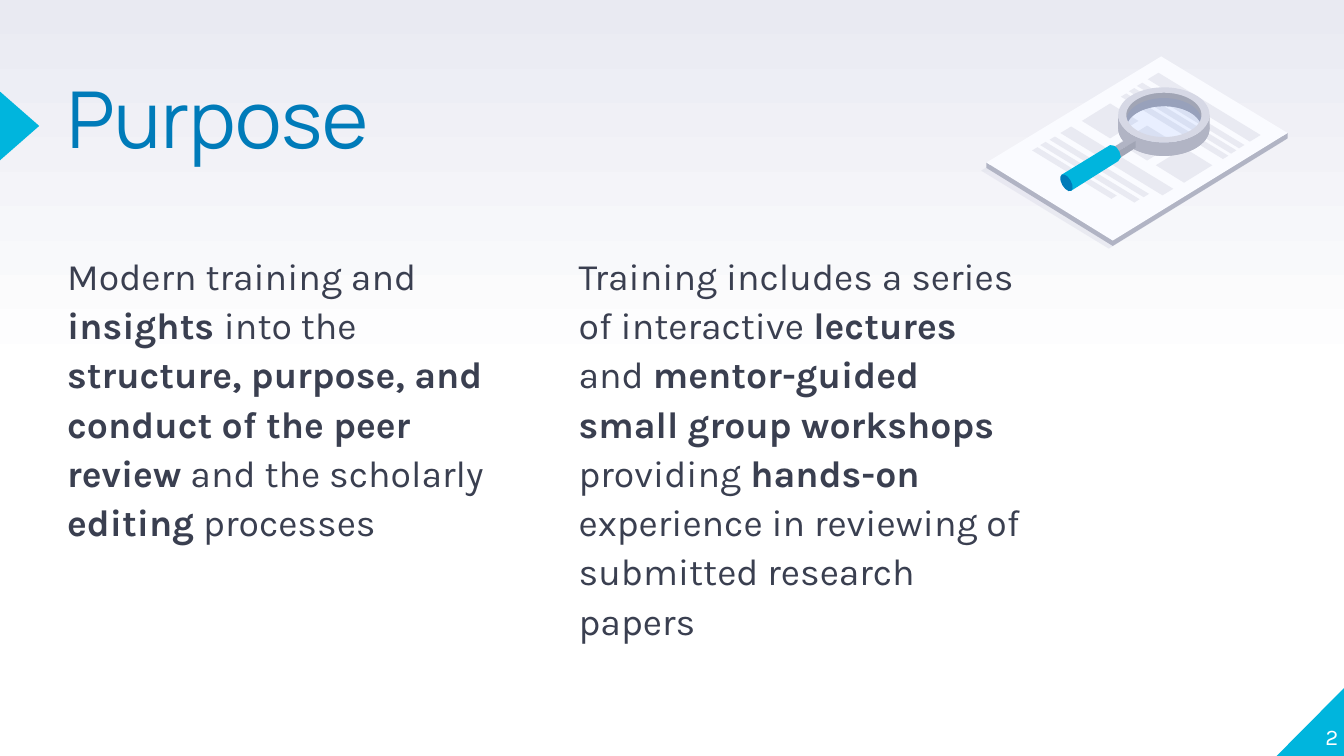
from copy import deepcopy
from math import cos, radians, sin

from lxml import etree
from pptx import Presentation
from pptx.dml.color import RGBColor
from pptx.enum import shapes as kinds, text
from pptx.oxml import ns
from pptx.util import Pt

WHITE = RGBColor(0xFF, 0xFF, 0xFF)
BLACK_INK = RGBColor(0x3A, 0x3F, 0x50)
BLUE = RGBColor(0x00, 0x7B, 0xB9)
CYAN = RGBColor(0x00, 0xB5, 0xDD)
LENS = RGBColor(0x3E, 0x7E, 0xFF)
PAPER = RGBColor(0xFA, 0xFB, 0xFF)
PALE = RGBColor(0xE9, 0xEA, 0xF2)
SILVER = RGBColor(0xD6, 0xD8, 0xE5)
GREY = RGBColor(0xB1, 0xB4, 0xC4)
DARK_GREY = RGBColor(0xA1, 0xA5, 0xB5)

GRID = Pt(0.72)  # drawing unit of the illustration
SLOPE = 0.61     # fall of the sheet's long edges

TITLE = {"size": Pt(42), "name": "Manrope"}
BODY = {"size": Pt(20), "name": "Karla"}
NUMBER = {"size": Pt(12), "name": "Karla"}

# Runs alternate between regular and bold
LEFT_TEXT = ["Modern training and ", "insights ", "into the ",
             "structure, purpose, and conduct of the peer review",
             " and the scholarly ", "editing", " processes"]
RIGHT_TEXT = ["Training includes a series of interactive ", "lectures ", "and ",
              "mentor-guided small group workshops", " providing ", "hands-on ",
              "experience in reviewing of submitted research papers"]


def apply(target, values):
    for name, value in values.items():
        setattr(target, name, value)


def paint(shape, color, alpha=None):
    shape.shadow.inherit = False
    shape.fill.solid()
    shape.fill.fore_color.rgb = color
    shape.line.fill.background()
    if alpha:
        rgb = shape._element.spPr.find(".//" + ns.qn("a:srgbClr"))
        etree.SubElement(rgb, ns.qn("a:alpha"), val=str(alpha * 1000))
    return shape


def set_background(slide):
    fill = slide.background.fill
    fill.gradient()
    fill.gradient_angle = 90
    for stop, position, color in zip(fill.gradient_stops, (0, 1), (WHITE, PALE)):
        stop.position = position
        stop.color.rgb = color
    first = slide._element.find(".//" + ns.qn("a:gs"))
    middle = deepcopy(first)
    middle.set("pos", "50000")
    first.addnext(middle)


def add_preset(shapes, kind, box, color, alpha=None, unit=Pt(1), rotation=0):
    shape = shapes.add_shape(kind, *(round(value * unit) for value in box))
    shape.rotation = rotation
    return paint(shape, color, alpha)


def add_outline(shapes, color, *contours, alpha=None):
    scaled = [[(x * GRID, y * GRID) for x, y in points] for points in contours]
    builder = shapes.build_freeform(*scaled[0][0], scale=1.0)
    builder.add_line_segments(scaled[0][1:], close=True)
    for points in scaled[1:]:
        builder.move_to(*points[0])
        builder.add_line_segments(points[1:], close=True)
    return paint(builder.convert_to_shape(), color, alpha)


def arc(center_y, radius_x, radius_y, start=0, end=360):
    step = 5 if end > start else -5
    return [(866 + radius_x * cos(radians(angle)), center_y + radius_y * sin(radians(angle)))
            for angle in range(start, end + step, step)]


def fill_text(shape, runs, font, color, spacing, anchor=text.MSO_ANCHOR.TOP,
              alignment=text.PP_ALIGN.LEFT):
    frame = shape.text_frame
    apply(frame, {"margin_left": 0, "margin_right": 0, "margin_top": 0, "margin_bottom": 0,
                  "word_wrap": True, "auto_size": text.MSO_AUTO_SIZE.NONE,
                  "vertical_anchor": anchor})
    paragraph = frame.paragraphs[0]
    apply(paragraph, {"alignment": alignment, **spacing})
    for index, words in enumerate(runs):
        run = paragraph.add_run()
        run.text = words
        apply(run.font, {**font, "bold": index % 2 == 1})
        run.font.color.rgb = color
    return paragraph


def place(shape, box):
    apply(shape, dict(zip(("left", "top", "width", "height"), map(Pt, box))))


def add_body(placeholder, box, runs):
    place(placeholder, box)
    paragraph = fill_text(placeholder, runs, BODY, BLACK_INK,
                          {"line_spacing": 1.1, "space_before": Pt(6)})
    properties = paragraph._p.get_or_add_pPr()
    apply_indent = {"marL": "0", "indent": "0"}
    for name, value in apply_indent.items():
        properties.set(name, value)
    etree.SubElement(properties, ns.qn("a:buNone"))


def add_sheet(shapes):
    add_outline(shapes, SILVER, [(825, 185), (730, 127), (860, 47), (955, 105)], alpha=40)
    add_outline(shapes, GREY, [(955, 101), (864, 45), (737, 123), (734, 121), (734, 125),
                               (828, 183), (958, 103), (958, 99)])
    add_outline(shapes, PAPER, [(828, 179), (734, 121), (864, 42), (958, 99)])
    # Text lines: start, length and thickness
    for x, y, length, thick in ((854, 59, 76, 8), (846, 64, 76, 4), (840, 68, 76, 4),
                                (834, 72, 76, 4), (789, 99, 76, 8), (781, 104, 70, 4),
                                (774, 108, 70, 4), (768, 112, 59, 4)):
        near, far = (x, y), (x + length, y + SLOPE * length)
        across = (thick, -SLOPE * thick)
        add_outline(shapes, PALE, [near, (near[0] + across[0], near[1] + across[1]),
                                   (far[0] + across[0], far[1] + across[1]), far])
    # Picture blocks
    for index in range(3):
        add_preset(shapes, kinds.MSO_SHAPE.DIAMOND,
                   (805 + 27.5 * index, 77 + 16.5 * index, 42, 26), PALE, unit=GRID)


def add_magnifier(shapes):
    # Lower ring, inner wall and glass
    add_outline(shapes, GREY, arc(95.5, 34, 20.5), arc(95.5, 28, 16.5))
    add_outline(shapes, DARK_GREY, arc(95.5, 28, 16.5, 345, 195)
                + [(835, 85), (839, 75), (853, 67), (877, 68), (894, 78), (894, 88)])
    add_preset(shapes, kinds.MSO_SHAPE.OVAL, (838, 73, 56, 34), LENS, 9, GRID)
    # Outer wall and upper ring
    add_outline(shapes, GREY, arc(95.5, 34, 20.5, 0, 180) + arc(85.5, 34, 20.5, 180, 0))
    add_outline(shapes, SILVER, arc(85.5, 34, 20.5), arc(85.5, 28, 16.5))
    # Neck and handle
    add_outline(shapes, GREY, [(845, 105), (831, 113), (826, 111), (841, 102)])
    add_outline(shapes, DARK_GREY, [(845, 110), (831, 119), (831, 113), (845, 105)])
    add_outline(shapes, CYAN, [(826, 108), (790, 130), (797, 142), (832, 120), (834, 117),
                               (833, 113), (831, 110), (829, 108.5)])
    add_preset(shapes, kinds.MSO_SHAPE.OVAL, (790, 129, 7, 14), BLUE, unit=GRID, rotation=330)


def main():
    presentation = Presentation()
    apply(presentation, {"slide_width": Pt(720), "slide_height": Pt(405)})
    slide = presentation.slides.add_slide(presentation.slide_layouts[3])
    set_background(slide)

    # Corner and title marker
    corner = add_preset(slide.shapes, kinds.MSO_SHAPE.RIGHT_TRIANGLE,
                        (684, 368.2, 36.5, 36.8), CYAN)
    corner._element.spPr.find(ns.qn("a:xfrm")).set("flipH", "1")
    add_preset(slide.shapes, kinds.MSO_SHAPE.ISOSCELES_TRIANGLE,
               (-7.9, 57, 36.8, 21), CYAN, rotation=90)

    # Title and columns
    title, left, right = slide.placeholders
    place(title, (36, 47.5, 481, 85))
    fill_text(title, ["Purpose"], TITLE, BLUE, {"line_spacing": 0.8})
    add_body(left, (36, 133.2, 240, 135.4), LEFT_TEXT)
    add_body(right, (310, 133.2, 240, 192.2), RIGHT_TEXT)

    # Slide number
    number = slide.shapes.add_textbox(*map(Pt, (681, 365, 36, 36.8)))
    fill_text(number, ["2"], NUMBER, WHITE, {}, text.MSO_ANCHOR.BOTTOM, text.PP_ALIGN.RIGHT)

    # Illustration
    illustration = slide.shapes.add_group_shape()
    add_sheet(illustration.shapes)
    add_magnifier(illustration.shapes)

    presentation.save("out.pptx")


if __name__ == "__main__":
    main()
